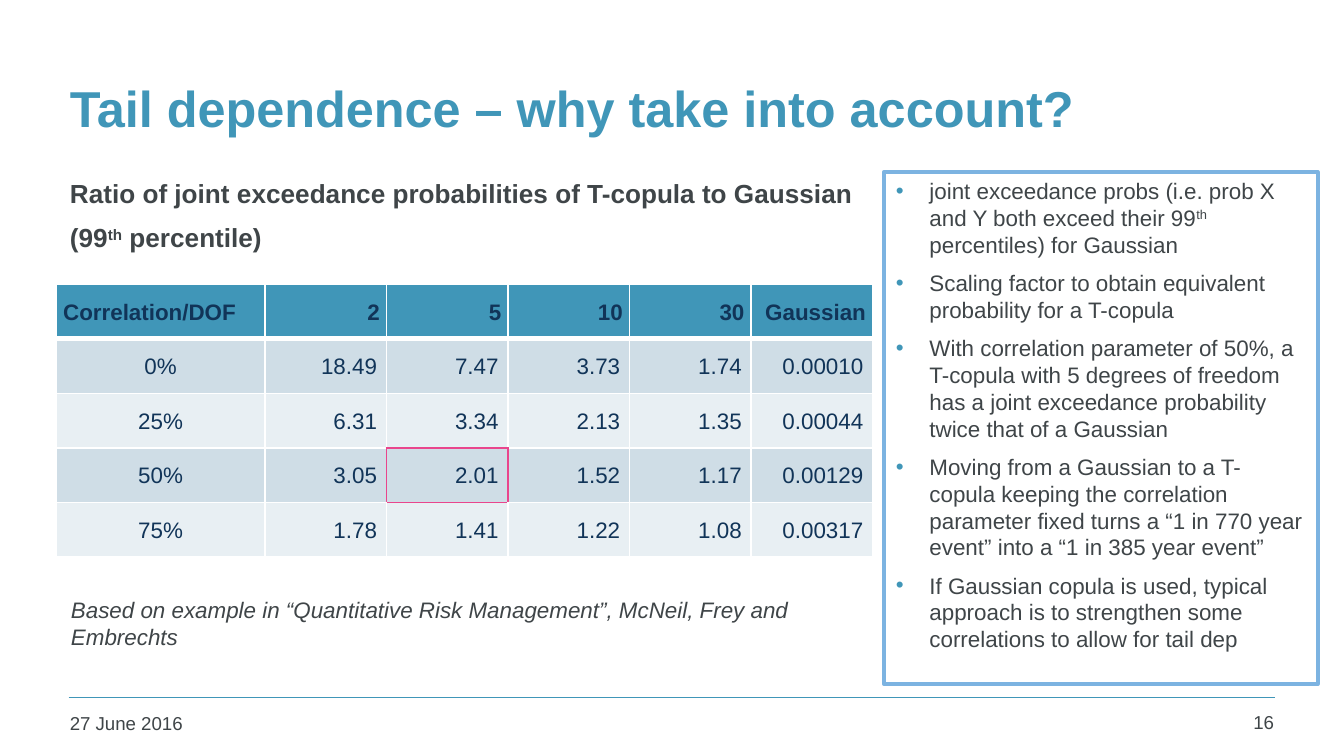
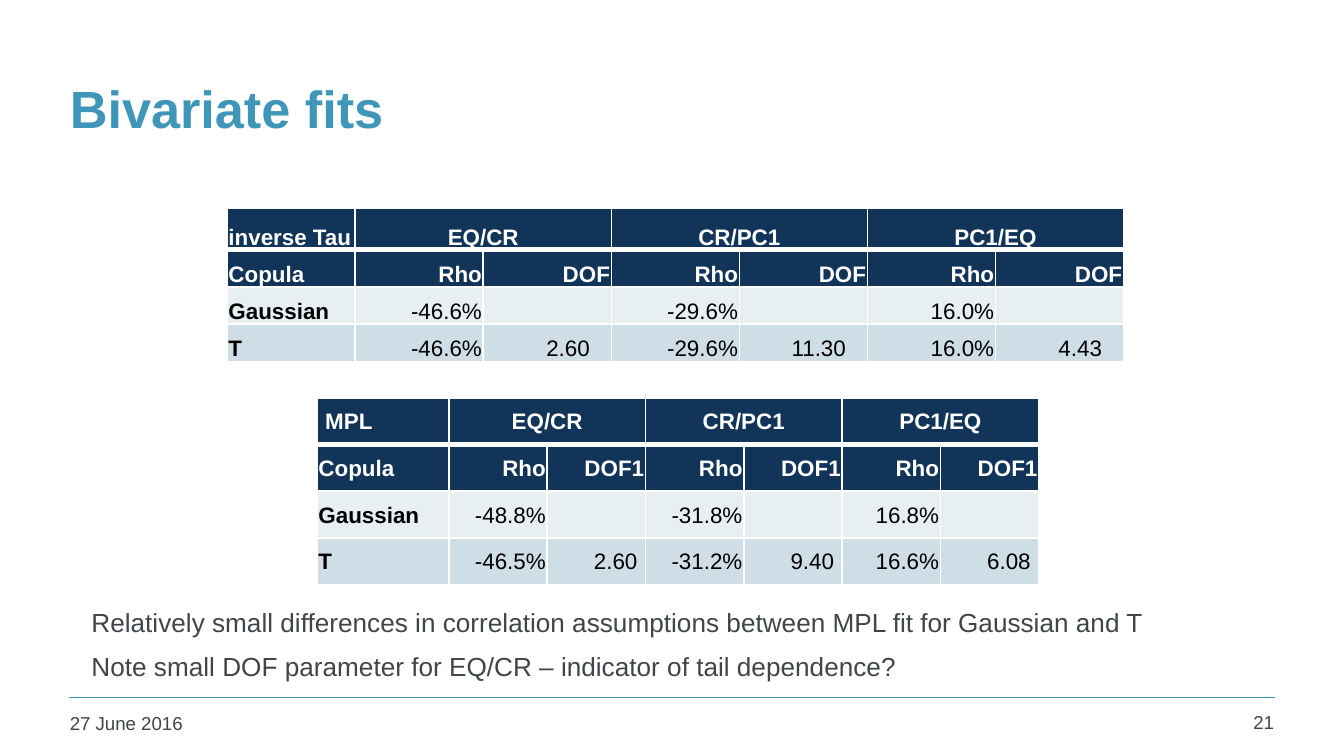
from lxml.etree import SubElement
from pptx import Presentation
from pptx.dml.color import RGBColor
from pptx.enum.shapes import MSO_CONNECTOR
from pptx.enum.text import MSO_ANCHOR, MSO_AUTO_SIZE, PP_ALIGN
from pptx.oxml.ns import qn
from pptx.util import Inches, Pt

COLORS = {
    "accent": "4096B8", "navy": "113458", "text": "3F4548", "frame": "7CB3E1",
    "mark": "E9458C", "band": "CFDDE6", "pale": "E8EFF3", "white": "FFFFFF", "black": "000000",
}
FONT = "Arial"
COLUMNS = 100
LEFT, CENTER, RIGHT = PP_ALIGN.LEFT, PP_ALIGN.CENTER, PP_ALIGN.RIGHT


def rgb(name):
    return RGBColor.from_string(COLORS[name])


def write(p, text, size=12, color="text", bold=False, italic=False, align=LEFT, spacing=1.0, before=0):
    p.alignment = align
    p.line_spacing = spacing
    p.space_before = Pt(before)
    if not text:
        SubElement(p._p, qn("a:endParaRPr"), sz=str(size * 100))
    for i, part in enumerate(text.split("^") if text else []):
        r = p.add_run()
        r.text = part
        r.font.name, r.font.size = FONT, Pt(size)
        r.font.bold, r.font.italic = bold, italic
        r.font.color.rgb = rgb(color)
        if i % 2:
            r.font._element.set("baseline", "30000")


def set_bullet(p, char=None):
    pPr = p._p.get_or_add_pPr()
    indent = Inches(0.25) if char else 0
    pPr.set("marL", str(indent))
    pPr.set("indent", str(-indent))
    if char:
        clr = SubElement(pPr, qn("a:buClr"))
        SubElement(clr, qn("a:srgbClr"), val=COLORS["accent"])
        SubElement(pPr, qn("a:buFont"), typeface=FONT)
        SubElement(pPr, qn("a:buChar"), char=char)
    else:
        SubElement(pPr, qn("a:buNone"))


def set_borders(cell, **sides):
    tcPr = cell._tc.get_or_add_tcPr()
    for i, side in enumerate("LRTB"):
        if side not in sides:
            continue
        color, width = sides[side]
        tag = qn(f"a:ln{side}")
        old = tcPr.find(tag)
        if old is not None:
            tcPr.remove(old)
        ln = SubElement(tcPr, tag, w=str(Pt(width)))
        fill = SubElement(ln, qn("a:solidFill"))
        SubElement(fill, qn("a:srgbClr"), val=COLORS[color])
        tcPr.insert(i, ln)


class Deck:
    def __init__(self):
        self.prs = Presentation()
        self.prs.slide_width = Inches(10)
        self.prs.slide_height = self.prs.slide_width * 9 // 16
        self.unit = self.prs.slide_width / COLUMNS
        self.s = None

    def grid(self, *cells):
        return [int(n * self.unit) for n in cells]

    def place(self, shape, at):
        shape.left, shape.top, shape.width, shape.height = self.grid(*at)

    def frame(self, shape, anchor=MSO_ANCHOR.TOP, margins=(0.9, 0.4)):
        tf = shape.text_frame
        tf.word_wrap = True
        tf.auto_size = MSO_AUTO_SIZE.NONE
        tf.vertical_anchor = anchor
        tf.margin_left = tf.margin_right = self.grid(margins[0])[0]
        tf.margin_top = tf.margin_bottom = self.grid(margins[1])[0]
        return tf

    def slide(self, layout, title, number, size=28):
        self.s = self.prs.slides.add_slide(self.prs.slide_layouts[layout])
        shape = self.s.shapes.title
        self.place(shape, (4.3, 3.3, 90.7, 9.4))
        tf = self.frame(shape, MSO_ANCHOR.MIDDLE)
        write(tf.paragraphs[0], title, size=size, color="accent", bold=True)
        self.line(5.1, 51.9, 94.9, 51.9)
        self.text("27 June 2016", (4.3, 52.6, 22, 2.7), size=10)
        self.text(number, (88.6, 52.5, 7.1, 2.8), size=10, align=RIGHT)

    def line(self, x1, y1, x2, y2):
        line = self.s.shapes.add_connector(MSO_CONNECTOR.STRAIGHT, *self.grid(x1, y1, x2, y2))
        line.line.color.rgb, line.line.width = rgb("accent"), Pt(1)
        SubElement(line._element.spPr, qn("a:effectLst"))

    def text(self, text, at, margins=(0.9, 0.4), **style):
        tf = self.frame(self.s.shapes.add_textbox(*self.grid(*at)), margins=margins)
        write(tf.paragraphs[0], text, **style)

    def body(self, idx, at, lines, bullet=None, outline=None, size=14, **style):
        shape = self.s.placeholders[idx]
        self.place(shape, at)
        if outline:
            shape.line.color.rgb, shape.line.width = rgb(outline), Pt(2)
        tf = self.frame(shape)
        for i, line in enumerate(lines):
            p = tf.paragraphs[0] if i == 0 else tf.add_paragraph()
            write(p, line, size=size, before=size / 2 if i else 0, **style)
            set_bullet(p, bullet)

    def table(self, at, first_col, first_row, rows, look):
        n_rows, n_cols = len(rows), len(rows[0])
        tbl = self.s.shapes.add_table(n_rows, n_cols, *self.grid(*at)).table
        for c, col in enumerate(tbl.columns):
            col.width = self.grid((at[2] - first_col) / (n_cols - 1) if c else first_col)[0]
        for r, row in enumerate(tbl.rows):
            row.height = self.grid((at[3] - first_row) / (n_rows - 1) if r else first_row)[0]
        for r, row in enumerate(rows):
            for c, value in enumerate(row):
                self.cell(tbl.cell(r, c), value, r, **look(r, c))
        return tbl

    def cell(self, cell, value, r, fill, anchor=MSO_ANCHOR.MIDDLE, margins=(0.1, 0.1), top=0, **style):
        cell.fill.solid()
        cell.fill.fore_color.rgb = rgb(fill)
        cell.vertical_anchor = anchor
        cell.margin_left, cell.margin_right, cell.margin_top, cell.margin_bottom = self.grid(*margins, top, 0)
        write(cell.text_frame.paragraphs[0], value, **style)
        thin, thick = ("white", 1), ("white", 3)
        set_borders(cell, L=thin, R=thin, T=thick if r == 1 else thin, B=thin if r else thick)

    def highlight(self, tbl, r, c):
        edge = ("mark", 1)
        set_borders(tbl.cell(r, c), L=edge, R=edge, T=edge, B=edge)
        for dr, dc, side in ((-1, 0, "B"), (1, 0, "T"), (0, -1, "R"), (0, 1, "L")):
            set_borders(tbl.cell(r + dr, c + dc), **{side: edge})

    def fit_table(self, at, first_col, first_row, name, dof, fits, anchor, name_pad, dof_pad):
        def look(r, c):
            head = r < 2
            pad = dof_pad if r == 3 and c and c % 2 == 0 else 0.1
            return dict(
                fill="navy" if head else ("pale", "band")[r - 2],
                color="white" if head else "black", bold=head or c == 0,
                align=LEFT if c == 0 else RIGHT if r else CENTER,
                anchor=anchor, top=0.1, margins=(0.1 if r or c else name_pad, pad))

        pairs = ("EQ/CR", "CR/PC1", "PC1/EQ")
        rows = [[name] + [v for pair in pairs for v in (pair, "")], ["Copula"] + ["Rho", dof] * 3, *fits]
        tbl = self.table(at, first_col, first_row, rows, look)
        for c in range(1, 7, 2):
            tbl.cell(0, c).merge(tbl.cell(0, c + 1))


def ratio_look(r, c):
    pad = 0.5 if r == 0 or c == 0 else 0.7
    return dict(
        fill=("pale", "band")[r % 2] if r else "accent", color="navy", bold=r == 0, spacing=1.07,
        align=RIGHT if c else CENTER if r else LEFT, margins=(pad, pad))


def tail_dependence(deck):
    deck.slide(3, "Tail dependence – why take into account?", "16", size=27)
    deck.body(1, (4.3, 12.8, 60.6, 38.1), [
        "Ratio of joint exceedance probabilities of T-copula to Gaussian",
        "(99^th^ percentile)",
    ], bold=True)
    deck.body(2, (65.75, 12.8, 32.3, 38.1), [
        "joint exceedance probs (i.e. prob X and Y both exceed their 99^th^ percentiles) for Gaussian",
        "Scaling factor to obtain equivalent probability for a T-copula",
        "With correlation parameter of 50%, a T-copula with 5 degrees of freedom has a joint "
        "exceedance probability twice that of a Gaussian",
        "Moving from a Gaussian to a T-copula keeping the correlation parameter fixed turns a "
        "“1 in 770 year event” into a “1 in 385 year event”",
        "If Gaussian copula is used, typical approach is to strengthen some correlations to allow for tail dep",
    ], bullet="•", outline="frame", size=12)
    tbl = deck.table((4.2, 21.15, 60.75, 20.3), 15.5, 4.06, [
        ["Correlation/DOF", "2", "5", "10", "30", "Gaussian"],
        ["0%", "18.49", "7.47", "3.73", "1.74", "0.00010"],
        ["25%", "6.31", "3.34", "2.13", "1.35", "0.00044"],
        ["50%", "3.05", "2.01", "1.52", "1.17", "0.00129"],
        ["75%", "1.78", "1.41", "1.22", "1.08", "0.00317"],
    ], ratio_look)
    deck.highlight(tbl, 3, 2)
    deck.text("Based on example in “Quantitative Risk Management”, McNeil, Frey and Embrechts",
              (4.3, 43.9, 60.6, 5), margins=(1, 0.5), italic=True)


def bivariate_fits(deck):
    deck.slide(1, "Bivariate fits", "21")
    deck.body(1, (5.9, 44.7, 89.1, 6.2), [
        "Relatively small differences in correlation assumptions between MPL fit for Gaussian and T",
        "Note small DOF parameter for EQ/CR – indicator of tail dependence?",
    ])
    deck.fit_table((23.6, 29.6, 53.7, 13.9), 9.8, 3.48, "MPL", "DOF1", [
        ["Gaussian", "-48.8%", "", "-31.8%", "", "16.8%", ""],
        ["T", "-46.5%", "2.60", "-31.2%", "9.40", "16.6%", "6.08"],
    ], MSO_ANCHOR.MIDDLE, name_pad=0.6, dof_pad=0.6)
    deck.fit_table((16.9, 15.5, 66.7, 11.4), 9.53, 3.1, "inverse Tau", "DOF", [
        ["Gaussian", "-46.6%", "", "-29.6%", "", "16.0%", ""],
        ["T", "-46.6%", "2.60", "-29.6%", "11.30", "16.0%", "4.43"],
    ], MSO_ANCHOR.BOTTOM, name_pad=0.1, dof_pad=1.6)


def main():
    deck = Deck()
    tail_dependence(deck)
    bivariate_fits(deck)
    deck.prs.save("out.pptx")


if __name__ == "__main__":
    main()
